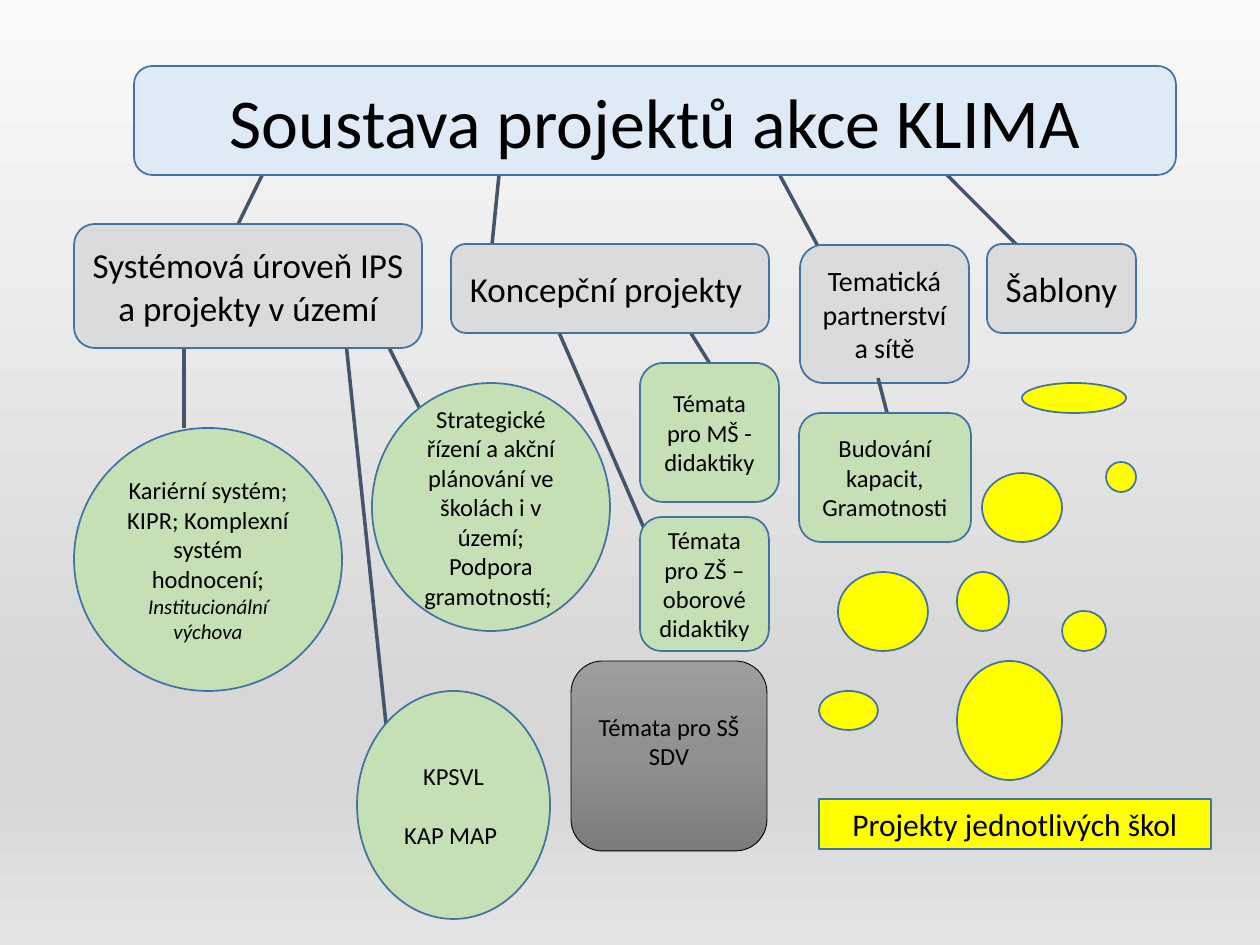
import pptx
import pptx.util
import pptx.dml.color
import pptx.enum.shapes
import pptx.enum.text
import pptx.oxml
import pptx.oxml.ns
import lxml.etree

SHAPE = pptx.enum.shapes.MSO_SHAPE
COLORS = {
    "title": "DEEBF7", "level": "DBDBDB", "topic": "C5E0B4", "school": "FFFF00",
    "border": "43739E", "link": "44546A", "text": "000000",
}
BACKDROP = [(0, "FAFAFA"), (74, "D7D7D7"), (83, "D7D7D7"), (100, "E4E4E4")]
GRAY = [(0, "9D9D9D"), (50, "909090"), (100, "7C7C7C")]


def px(value):
    return pptx.util.Emu(round(value * 914400 / 126))


def rgb(name):
    return pptx.dml.color.RGBColor.from_string(COLORS[name])


class Diagram:
    font = "Calibri"

    def __init__(self, deck):
        self.page = deck.slides.add_slide(deck.slide_layouts[6])

    def gradient(self, fill, owner, stops):
        fill.gradient()
        fill.gradient_angle = 270
        stop_list = next(owner.iter(pptx.oxml.ns.qn("a:gsLst")))
        for stop in list(stop_list):
            stop_list.remove(stop)
        for position, color in stops:
            stop = lxml.etree.SubElement(stop_list, pptx.oxml.ns.qn("a:gs"), pos=str(position * 1000))
            lxml.etree.SubElement(stop, pptx.oxml.ns.qn("a:srgbClr"), val=color)

    def backdrop(self, stops):
        self.gradient(self.page.background.fill, self.page.element, stops)

    def link(self, x1, y1, x2, y2):
        line = self.page.shapes.add_connector(
            pptx.enum.shapes.MSO_CONNECTOR.STRAIGHT, px(x1), px(y1), px(x2), px(y2))
        line.line.color.rgb = rgb("link")
        line.line.width = pptx.util.Pt(2)
        lxml.etree.SubElement(line.element.spPr, pptx.oxml.ns.qn("a:effectLst"))
        return line

    def shape(self, kind, fill, at, border="border", width=1):
        box = self.page.shapes.add_shape(kind, *map(px, at))
        box.shadow.inherit = False
        if isinstance(fill, list):
            self.gradient(box.fill, box.element, fill)
        else:
            box.fill.solid()
            box.fill.fore_color.rgb = rgb(fill)
        box.line.color.rgb = rgb(border)
        box.line.width = pptx.util.Pt(width)
        return box

    def label(self, box, size, *lines):
        frame = box.text_frame
        frame.word_wrap = True
        frame.vertical_anchor = pptx.enum.text.MSO_ANCHOR.MIDDLE
        for index, line in enumerate(lines):
            para = frame.paragraphs[0] if index == 0 else frame.add_paragraph()
            para.alignment = pptx.enum.text.PP_ALIGN.CENTER
            span = para.add_run()
            span.text = line
            span.font.name = self.font
            span.font.size = pptx.util.Pt(size)
            span.font.color.rgb = rgb("text")
        return box

    def node(self, kind, fill, at, size, *lines):
        return self.label(self.shape(kind, fill, at), size, *lines)


def main():
    deck = pptx.Presentation()
    deck.slide_width, deck.slide_height = px(1260), px(945)
    diagram = Diagram(deck)
    diagram.backdrop(BACKDROP)

    for ends in [
        (272, 155, 223, 255), (501, 155, 491, 255), (769, 155, 828, 265),
        (927, 155, 1037, 265), (184, 314, 184, 428), (343, 314, 386, 724),
        (372, 314, 422, 413), (551, 314, 650, 542),
    ]:
        diagram.link(*ends)
    nursery_link = diagram.link(679, 314, 709, 363)

    diagram.node(SHAPE.ROUNDED_RECTANGLE, "title", (134, 66, 1042, 109), 40,
                 "Soustava projektů akce KLIMA")
    for at, size, name in [
        ((74, 224, 348, 124), 20, "Systémová úroveň IPS a projekty v území"),
        ((451, 244, 318, 89), 20, "Koncepční projekty "),
        ((800, 245, 169, 138), 16, "Tematická partnerství a sítě"),
        ((987, 244, 149, 89), 20, "Šablony"),
    ]:
        diagram.node(SHAPE.ROUNDED_RECTANGLE, "level", at, size, name)

    career = diagram.node(SHAPE.OVAL, "topic", (74, 428, 268, 263), 14, "Kariérní systém;",
                          "KIPR; Komplexní systém hodnocení;", "Institucionální výchova")
    note = career.text_frame.paragraphs[2].runs[0].font
    note.size = pptx.util.Pt(12)
    note.italic = True
    plans = diagram.node(SHAPE.OVAL, "topic", (357, 691, 193, 228), 14, "KPSVL", "KAP MAP ")
    plans.text_frame.paragraphs[1].space_before = pptx.util.Pt(17)
    diagram.node(SHAPE.OVAL, "topic", (372, 383, 238, 248), 14,
                 "Strategické řízení a akční plánování ve školách i v území; Podpora gramotností; ")
    nursery = diagram.node(SHAPE.ROUNDED_RECTANGLE, "topic", (640, 363, 139, 139), 14,
                           "Témata pro MŠ - didaktiky")
    nursery_link.end_connect(nursery, 0)
    diagram.node(SHAPE.ROUNDED_RECTANGLE, "topic", (640, 517, 129, 134), 14,
                 "Témata pro ZŠ – oborové didaktiky")

    for at in [
        (838, 572, 90, 79), (982, 473, 80, 69), (1062, 611, 44, 40), (957, 661, 105, 119),
        (819, 691, 59, 39), (1022, 383, 104, 30), (1106, 462, 30, 30), (957, 572, 52, 59),
    ]:
        diagram.shape(SHAPE.OVAL, "school", at)
    diagram.node(SHAPE.RECTANGLE, "school", (819, 799, 392, 50), 18, "Projekty jednotlivých škol")

    diagram.link(878, 378, 891, 428)
    diagram.node(SHAPE.ROUNDED_RECTANGLE, "topic", (799, 413, 172, 129), 14,
                 "Budování kapacit, Gramotnosti")
    secondary = diagram.shape(SHAPE.ROUNDED_RECTANGLE, GRAY, (571, 661, 196, 190), "text", 0.5)
    diagram.label(secondary, 14, "Témata pro SŠ", "SDV")
    secondary.text_frame.margin_bottom = px(36)

    deck.save("out.pptx")


if __name__ == "__main__":
    main()
